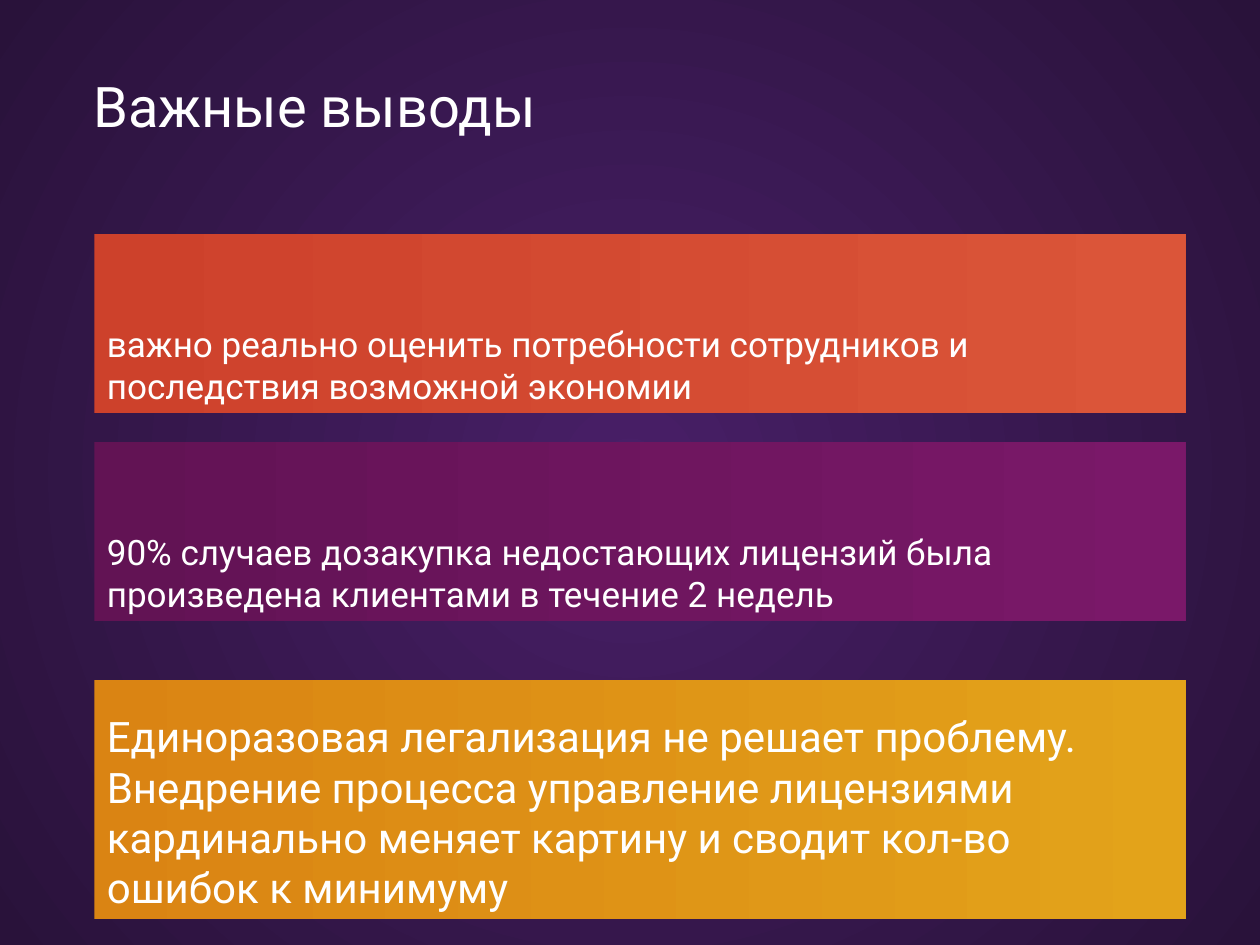
from lxml import etree
from pptx import Presentation
from pptx.dml.color import RGBColor
from pptx.enum.shapes import MSO_SHAPE as Shape
from pptx.enum.text import MSO_ANCHOR as Anchor, MSO_AUTO_SIZE as AutoSize, PP_ALIGN as Align
from pptx.oxml import parse_xml
from pptx.oxml.ns import nsdecls, qn
from pptx.util import Inches, Pt


def color(value):
    """Turn a hex string into a colour."""
    return RGBColor.from_string(value)


class Deck:
    """Hold the style and the current slide; lengths are percent of the slide."""

    font_name = "Roboto"
    text_color = "FFFFFF"

    def __init__(self, width, height):
        """Start a presentation with one title-only slide."""
        self.presentation = Presentation()
        self.presentation.slide_width = Inches(width)
        self.presentation.slide_height = Inches(height)
        self.slide = self.presentation.slides.add_slide(self.presentation.slide_layouts[5])

    def place(self, shape, left, top, width, height):
        """Position a shape by shares of the slide's size."""
        column = self.presentation.slide_width / 100
        row = self.presentation.slide_height / 100
        shape.left, shape.width = round(left * column), round(width * column)
        shape.top, shape.height = round(top * row), round(height * row)

    def gradient(self, fill, start, end):
        """Give a fill a two-colour gradient from left to right."""
        fill.gradient()
        fill.gradient_angle = 0
        for stop, value, position in zip(fill.gradient_stops, (start, end), (0, 1)):
            stop.color.rgb = color(value)
            stop.position = position

    def background(self, center, edge):
        """Fill the background with a circular gradient."""
        background = self.slide.background
        self.gradient(background.fill, center, edge)
        linear = next(self.slide.element.iter(qn("a:lin")))
        circle = parse_xml(f'<a:path {nsdecls("a")} path="circle"/>')
        etree.SubElement(circle, qn("a:fillToRect"), l="50000", t="50000", r="50000", b="50000")
        linear.getparent().replace(linear, circle)

    def set_text(self, shape, text, size, anchor):
        """Set left-aligned text in the deck's style."""
        frame = shape.text_frame
        frame.text = text
        frame.word_wrap = True
        frame.auto_size = AutoSize.NONE
        frame.vertical_anchor = anchor
        paragraph = frame.paragraphs[0]
        paragraph.alignment = Align.LEFT
        for run in paragraph.runs:
            run.font.name = self.font_name
            run.font.size = Pt(size)
            run.font.color.rgb = color(self.text_color)

    def title(self, text, box, size):
        """Move and format the title placeholder."""
        title = self.slide.shapes.title
        self.place(title, *box)
        self.set_text(title, text, size, Anchor.MIDDLE)

    def banner(self, text, box, size, start, end):
        """Add a gradient rectangle with text at its bottom."""
        shape = self.slide.shapes.add_shape(Shape.RECTANGLE, 0, 0, 0, 0)
        self.place(shape, *box)
        shape.shadow.inherit = False
        shape.line.fill.background()
        self.gradient(shape.fill, start, end)
        self.set_text(shape, text, size, Anchor.BOTTOM)


def main():
    """Build the conclusions slide."""
    deck = Deck(10, 7.5)
    deck.background("481F67", "29123A")
    deck.title("Важные выводы", (6.4, 6.8, 87.7, 8.67), 32)
    conclusions = [
        ("важно реально оценить потребности сотрудников и последствия возможной экономии",
         24.8, 18.93, 20, "CD412B", "DB5539"),
        ("90% случаев дозакупка недостающих лицензий была произведена клиентами "
         "в течение 2 недель",
         46.8, 18.93, 20, "621354", "7A1869"),
        ("Единоразовая легализация не решает проблему. Внедрение процесса управление "
         "лицензиями кардинально меняет картину и сводит кол-во ошибок к минимуму",
         72, 25.2, 24, "DA8413", "E3A31A"),
    ]
    for text, top, height, size, start, end in conclusions:
        deck.banner(text, (7.5, top, 86.6, height), size, start, end)
    deck.presentation.save("out.pptx")


if __name__ == "__main__":
    main()
